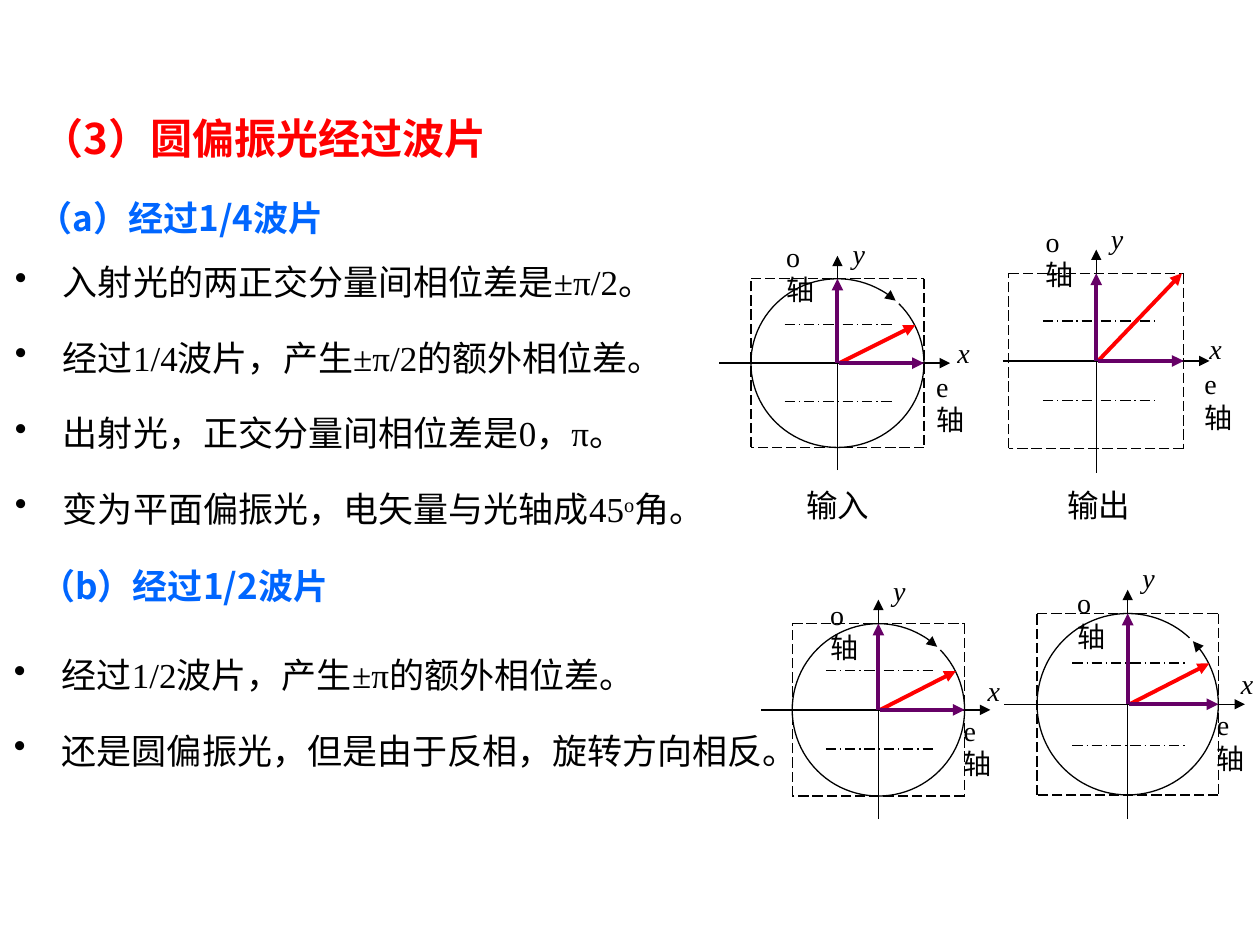
from dataclasses import dataclass

from lxml.etree import SubElement
from pptx import Presentation
from pptx.dml.color import RGBColor
from pptx.enum.dml import MSO_LINE
from pptx.enum.shapes import MSO_CONNECTOR, MSO_SHAPE
from pptx.enum.text import MSO_ANCHOR, PP_ALIGN
from pptx.oxml.ns import qn
from pptx.util import Pt

SANS, SERIF = "Noto Sans CJK SC", "Times New Roman"
BLACK, RED, BLUE, PLUM = "000000", "FF0000", "0066FF", "660066"
INDENT = 27.4

Point = tuple[float, float]


@dataclass
class Graph:
    """Two axes with a dashed frame; spin is the arrow end of the circle, if any."""
    left: float
    top: float
    right: float
    bottom: float
    axis_x: Point
    axis_y: Point
    ray: Point
    labels: dict[str, Point]
    spin: str = ""


GRAPHS = [
    Graph(429.1, 159.3, 528, 255.7, (411.1, 542.9), (268.6, 146.2), (0.9, 0.45),
          {"e轴": (527.8, 207.4), "o轴": (442.1, 133.2),
           "x": (540, 187.9), "y": (480.2, 131.8)}, "tailEnd"),
    Graph(576.5, 156.2, 676.4, 256.3, (573.1, 691.2), (270, 142.6), (0.98, 1),
          {"e轴": (681.1, 205.9), "o轴": (590.4, 124.6),
           "x": (684, 185.8), "y": (627.8, 123.1)}),
    Graph(452.7, 356.4, 551.2, 454.9, (434.9, 565.9), (468, 342.7), (0.9, 0.45),
          {"e轴": (543.6, 403.9), "o轴": (467.3, 337.7),
           "x": (557.3, 381.6), "y": (503.3, 324)}, "tailEnd"),
    Graph(592.6, 350.6, 696.2, 454.3, (573.8, 711.4), (468, 337), (0.9, 0.45),
          {"e轴": (688.3, 401), "o轴": (608.4, 331.2),
           "x": (702, 377.3), "y": (645.8, 316.8)}, "headEnd"),
]


def paint(hue: str) -> RGBColor:
    return RGBColor.from_string(hue)


def write(shapes, lines: list[str], left: float, top: float, width: float,
          height: float, *, size: float = 20, font: str = SERIF, hue: str = BLACK,
          bold: bool = False, slant: bool = False, align=PP_ALIGN.JUSTIFY,
          lead: float = 1.0, before: float = 0, list_mark: str = "",
          pad: Point = (0, 0), wrap: bool = True, anchor=MSO_ANCHOR.TOP) -> None:
    """Add a text box; a part of a line set between ^ marks is raised."""
    box = shapes.add_textbox(Pt(left), Pt(top), Pt(width), Pt(height))
    frame = box.text_frame
    frame.word_wrap, frame.vertical_anchor = wrap, anchor
    frame.margin_left = frame.margin_right = Pt(pad[0])
    frame.margin_top = frame.margin_bottom = Pt(pad[1])
    for i, line in enumerate(lines):
        para = frame.add_paragraph() if i else frame.paragraphs[0]
        para.alignment, para.line_spacing = align, lead
        para.space_before = Pt(before)
        if list_mark:
            props = para._p.get_or_add_pPr()
            props.set("marL", str(Pt(INDENT)))
            props.set("indent", str(-Pt(INDENT)))
            SubElement(props, qn("a:buChar")).set("char", list_mark)
        for j, part in enumerate(line.split("^")):
            run = para.add_run()
            run.text = part
            style = run.font
            style.size, style.name = Pt(size), font
            style.bold, style.italic = bold, slant
            style.color.rgb = paint(hue)
            props = run._r.get_or_add_rPr()
            SubElement(props, qn("a:ea")).set("typeface", SANS)
            if j % 2:
                props.set("baseline", "30000")


def add_head(line, end: str) -> None:
    SubElement(line._get_or_add_ln(), qn(f"a:{end}")).set("type", "triangle")


def draw(shapes, start: Point, stop: Point, *, hue: str = BLACK,
         width: float = 0.75, dash=None, head: bool = False) -> None:
    edge = shapes.add_connector(MSO_CONNECTOR.STRAIGHT,
                                *(Pt(n) for n in (*start, *stop)))
    edge.line.color.rgb = paint(hue)
    edge.line.width = Pt(width)
    if dash:
        edge.line.dash_style = dash
    if head:
        add_head(edge.line, "tailEnd")
    SubElement(edge._element.spPr, qn("a:effectLst"))


def draw_ring(shapes, graph: Graph) -> None:
    """Draw the circle as an arc with a small gap at the upper right."""
    ring = shapes.add_shape(MSO_SHAPE.ARC, Pt(graph.left), Pt(graph.top),
                            Pt(graph.right - graph.left),
                            Pt(graph.bottom - graph.top))
    for i, angle in enumerate((316, 313)):
        ring.adjustments[i] = angle * 0.6
    ring.shadow.inherit = False
    ring.fill.background()
    ring.line.color.rgb = paint(BLACK)
    ring.line.width = Pt(0.75)
    add_head(ring.line, graph.spin)


def draw_graph(slide, graph: Graph) -> None:
    shapes = slide.shapes.add_group_shape().shapes
    mid_x, mid_y = (graph.left + graph.right) / 2, (graph.top + graph.bottom) / 2
    half_x, half_y = graph.right - mid_x, graph.bottom - mid_y

    def spot(x: float, y: float) -> Point:
        """Map a place in the frame, from -1 to 1 with y up, to the slide."""
        return mid_x + x * half_x, mid_y - y * half_y

    first, last = graph.axis_x
    draw(shapes, (first, mid_y), (last, mid_y), head=True)
    first, last = graph.axis_y
    draw(shapes, (mid_x, first), (mid_x, last), head=True)
    nodes = [spot(1, 1), spot(1, -1), spot(-1, -1), spot(-1, 1)]
    for start, stop in zip(nodes, nodes[1:] + nodes[:1]):
        draw(shapes, start, stop, dash=MSO_LINE.LONG_DASH)
    for y in (-0.455, 0.455):
        draw(shapes, spot(-0.61, y), spot(0.66, y), dash=MSO_LINE.LONG_DASH_DOT)
    if graph.spin:
        draw_ring(shapes, graph)
    for tip, hue in ((graph.ray, RED), ((1, 0), PLUM), ((0, 1), PLUM)):
        base = spot(0.02 if tip[0] else 0, 0)
        draw(shapes, base, spot(*tip), hue=hue, width=2.25, head=True)
    for text, (left, top) in graph.labels.items():
        axis = len(text) == 1
        write(shapes, [text], left, top, 17.3 if axis else 30.6, 21, size=16,
              slant=axis, wrap=not axis, align=PP_ALIGN.LEFT, pad=(7.2, 3.6))


def main() -> None:
    deck = Presentation()
    deck.slide_width, deck.slide_height = Pt(720), Pt(540)
    slide = deck.slides.add_slide(deck.slide_layouts[6])
    shapes = slide.shapes

    write(shapes, ["（3）圆偏振光经过波片"], 16.6, 54.7, 659.5, 42.5, size=24,
          font=SANS, hue=RED, bold=True, lead=1.2, before=12, pad=(7.2, 3.6))
    for text, left, top in (("（a）经过1/4波片", 21.6, 105.1),
                            ("（b）经过1/2波片", 23, 315.4)):
        write(shapes, [text], left, top, 652.3, 36.7, font=SANS, hue=BLUE,
              bold=True, lead=1.3)
    first = ["入射光的两正交分量间相位差是±π/2。",
             "经过1/4波片，产生±π/2的额外相位差。",
             "出射光，正交分量间相位差是0，π。",
             "变为平面偏振光，电矢量与光轴成45^o^角。"]
    second = ["经过1/2波片，产生±π的额外相位差。",
              "还是圆偏振光，但是由于反相，旋转方向相反。"]
    for lines, left, top, width, height in ((first, 8.6, 141.8, 496, 157),
                                            (second, 7.9, 366.5, 454.3, 96.5)):
        write(shapes, lines, left, top, width, height, lead=1.3, before=12,
              list_mark="•")
    for text, left in (("输入", 422.6), ("输出", 571.7)):
        write(shapes, [text], left, 278.6, 112.3, 20.2, size=18, font=SANS,
              align=PP_ALIGN.CENTER, anchor=MSO_ANCHOR.MIDDLE)
    for graph in GRAPHS:
        draw_graph(slide, graph)

    deck.save("out.pptx")


if __name__ == "__main__":
    main()
